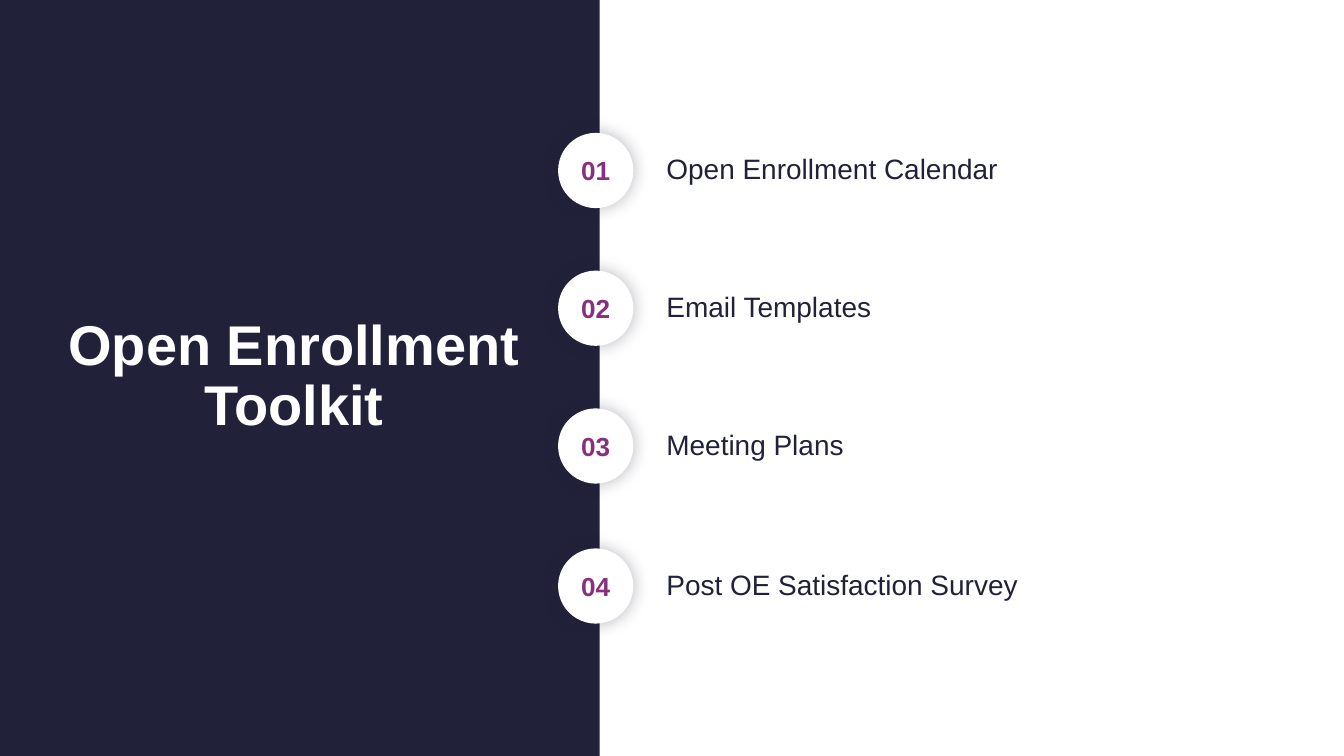
from lxml import etree
from pptx import Presentation
from pptx.dml.color import RGBColor
from pptx.enum.shapes import MSO_SHAPE as SHAPE
from pptx.enum.text import MSO_ANCHOR as ANCHOR, PP_ALIGN as ALIGN
from pptx.oxml.ns import qn
from pptx.util import Pt

COLORS = {"navy": "21213A", "white": "FFFFFF", "purple": "882F7D"}
ITEMS = [
    (71.2, "Open Enrollment Calendar"),
    (145, "Email Templates"),
    (218.8, "Meeting Plans"),
    (293.8, "Post OE Satisfaction Survey"),
]


def add_shape(kind, x, y, w, h, color):
    sp = s.shapes.add_shape(kind, Pt(x), Pt(y), Pt(w), Pt(h))
    sp.shadow.inherit = False
    sp.fill.solid()
    sp.fill.fore_color.rgb = RGBColor.from_string(COLORS[color])
    sp.line.fill.background()
    return sp


def write(sp, text, size, color, bold=False, align=ALIGN.CENTER):
    tf = sp.text_frame
    tf.word_wrap = True
    tf.vertical_anchor = ANCHOR.MIDDLE
    tf.margin_left = tf.margin_right = Pt(5.4)
    tf.margin_top = tf.margin_bottom = Pt(2.7)
    p = tf.paragraphs[0]
    p.alignment = align
    r = p.add_run()
    r.text = text
    r.font.name = "Arial"
    r.font.size = Pt(size)
    r.font.bold = bold
    r.font.color.rgb = RGBColor.from_string(COLORS[color])
    return p


prs = Presentation()
prs.slide_width, prs.slide_height = Pt(720), Pt(405)
s = prs.slides.add_slide(prs.slide_layouts[6])

add_shape(SHAPE.RECTANGLE, 0, 0, 321.3, 405, "navy")
title = s.shapes.add_textbox(Pt(0), Pt(119.5), Pt(315), Pt(165.6))
p = write(title, "Open Enrollment Toolkit", 30, "white", bold=True)
p.line_spacing = 0.9

for number, (top, label) in enumerate(ITEMS, 1):
    box = s.shapes.add_textbox(Pt(351.6), Pt(top + 0.9), Pt(268.6), Pt(38.2))
    p = write(box, label, 15, "navy", align=ALIGN.LEFT)
    p.line_spacing = 0.95
    p.space_before = Pt(8)

    badge = add_shape(SHAPE.OVAL, 299, top, 40.3, 40.3, "white")
    effects = badge.element.spPr.find(qn("a:effectLst"))
    shadow = etree.SubElement(effects, qn("a:outerShdw"), blurRad=str(Pt(9)),
                              dist="0", algn="ctr", rotWithShape="0")
    tint = etree.SubElement(shadow, qn("a:srgbClr"), val=COLORS["navy"])
    etree.SubElement(tint, qn("a:alpha"), val="31000")
    write(badge, f"{number:02}", 14, "purple", bold=True)

prs.save("out.pptx")
